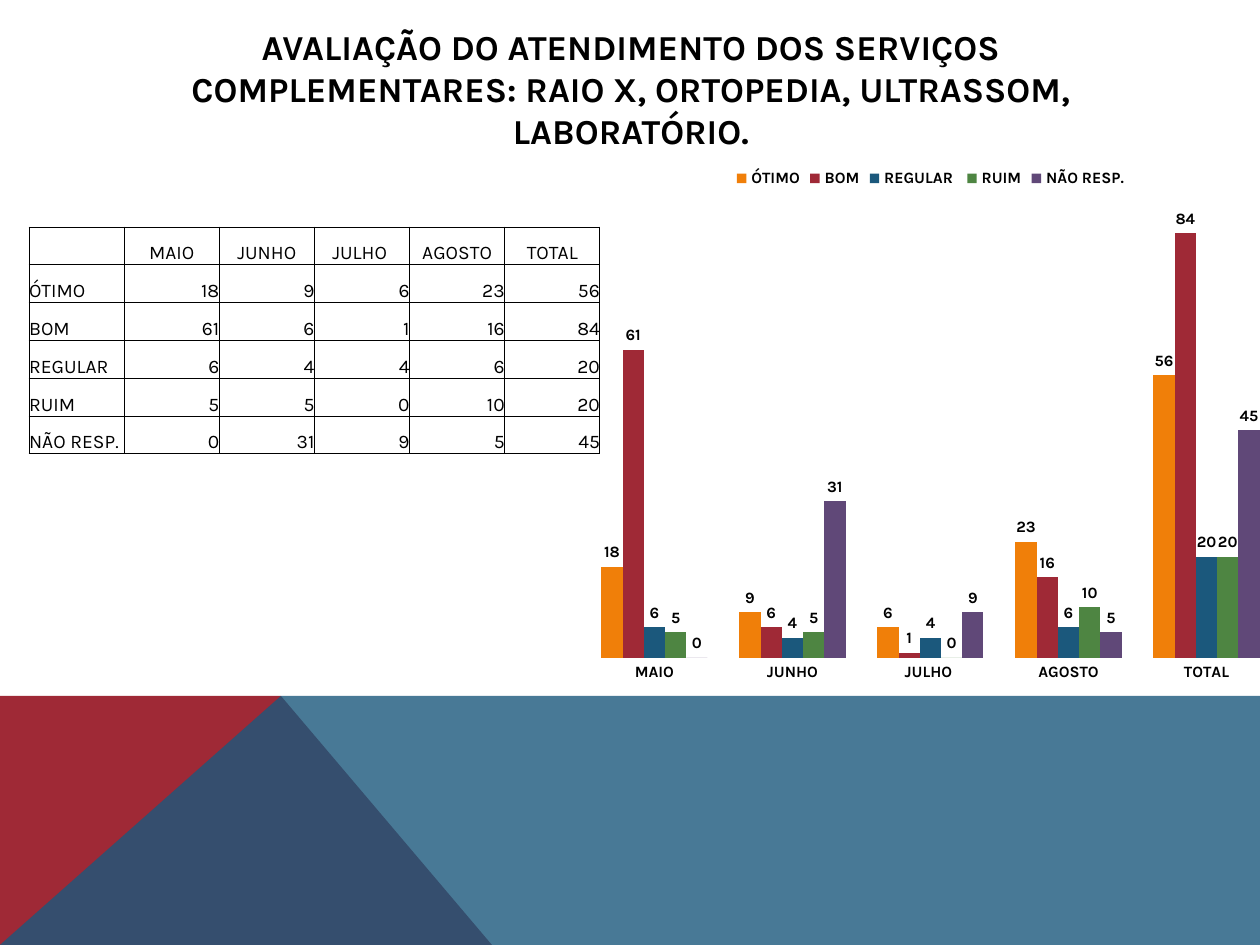
from lxml import etree
from pptx import Presentation
from pptx.chart.data import CategoryChartData
from pptx.dml.color import RGBColor
from pptx.enum.chart import XL_CHART_TYPE, XL_LABEL_POSITION, XL_LEGEND_POSITION, XL_TICK_MARK
from pptx.enum.text import MSO_ANCHOR, MSO_AUTO_SIZE, PP_ALIGN
from pptx.oxml import parse_xml
from pptx.oxml.ns import nsdecls, qn
from pptx.util import Pt

PX = 914400 / 126
BLACK = RGBColor(0x00, 0x00, 0x00)
ORANGE = RGBColor(0xF0, 0x7F, 0x09)
RED = RGBColor(0x9F, 0x29, 0x36)
BLUE = RGBColor(0x1B, 0x58, 0x7C)
GREEN = RGBColor(0x4E, 0x85, 0x42)
PURPLE = RGBColor(0x60, 0x48, 0x78)

MONTHS = ["MAIO", "JUNHO", "JULHO ", "AGOSTO", "TOTAL"]
RATINGS = [
    ("ÓTIMO", [18, 9, 6, 23, 56], ORANGE),
    ("BOM", [61, 6, 1, 16, 84], RED),
    ("REGULAR ", [6, 4, 4, 6, 20], BLUE),
    ("RUIM", [5, 5, 0, 10, 20], GREEN),
    ("NÃO RESP.", [0, 31, 9, 5, 45], PURPLE),
]


def emu(*lengths):
    return [round(length * PX) for length in lengths]


def style_font(font, size, bold):
    for name, value in {"name": "Karla", "size": Pt(size), "bold": bold}.items():
        setattr(font, name, value)
    font.color.rgb = BLACK


prs = Presentation()
prs.slide_width, prs.slide_height = emu(1260, 945)
slide = prs.slides.add_slide(prs.slide_layouts[5])
shapes = slide.shapes

# Bottom band: red wedge under a translucent blue one
wedges = [
    (RED, [(0, 945), (0, 696), (281, 696), (492, 945)]),
    (BLUE, [(0, 945), (281, 696), (1260, 696), (1260, 945)]),
]
for color, points in wedges:
    builder = shapes.build_freeform(*points[0], scale=PX)
    builder.add_line_segments(points[1:], close=True)
    wedge = builder.convert_to_shape()
    wedge.shadow.inherit = False
    wedge.fill.solid()
    wedge.fill.fore_color.rgb = color
    wedge.line.fill.background()
blue_fill = wedge.fill._xPr.find(".//" + qn("a:srgbClr"))
etree.SubElement(blue_fill, qn("a:alpha"), val="80000")

# Title, in front of the band
title = shapes.title
title.left, title.top, title.width, title.height = emu(113, 51, 1036, 76)
heading = title.text_frame
heading.text = ("AVALIAÇÃO DO ATENDIMENTO DOS SERVIÇOS COMPLEMENTARES: "
                "RAIO X, ORTOPEDIA, ULTRASSOM, LABORATÓRIO.")
for name, value in {"word_wrap": True, "auto_size": MSO_AUTO_SIZE.NONE,
                    "vertical_anchor": MSO_ANCHOR.MIDDLE}.items():
    setattr(heading, name, value)
heading.paragraphs[0].alignment = PP_ALIGN.CENTER
style_font(heading.paragraphs[0].runs[0].font, 20, True)
shapes._spTree.append(title._element)

# Table of answers
rows = [["", *MONTHS]] + [[name.strip(), *values] for name, values, _ in RATINGS]
table = shapes.add_table(6, 6, *emu(29, 227, 571, 227)).table
table.first_row = table.horz_banding = False
cell_format = {"margin_left": 0, "margin_right": 0, "margin_top": 0,
               "margin_bottom": 0, "vertical_anchor": MSO_ANCHOR.BOTTOM}
for r, row in enumerate(rows):
    for c, value in enumerate(row):
        cell = table.cell(r, c)
        for name, setting in cell_format.items():
            setattr(cell, name, setting)
        cell.fill.background()
        paragraph = cell.text_frame.paragraphs[0]
        if r == 0:
            paragraph.alignment = PP_ALIGN.CENTER
        else:
            paragraph.alignment = PP_ALIGN.RIGHT if c else PP_ALIGN.LEFT
        run = paragraph.add_run()
        run.text = str(value)
        style_font(run.font, 11, False)
        for position, side in enumerate(("lnL", "lnR", "lnT", "lnB")):
            cell._tc.tcPr.insert(position, parse_xml(
                f'<a:{side} {nsdecls("a")} w="6350"><a:solidFill>'
                f'<a:srgbClr val="{BLACK}"/></a:solidFill></a:{side}>'))

# Chart of answers
data = CategoryChartData()
data.categories = MONTHS
for name, values, _ in RATINGS:
    data.add_series(name, values)
chart = shapes.add_chart(XL_CHART_TYPE.COLUMN_CLUSTERED, *emu(571, 155, 719, 535), data).chart
style_font(chart.font, 10, False)
chart.has_title = False
chart.has_legend = True
chart.legend.position = XL_LEGEND_POSITION.TOP
chart.legend.include_in_layout = False
style_font(chart.legend.font, 9, True)

months_axis = chart.category_axis
months_axis.major_tick_mark = XL_TICK_MARK.NONE
months_axis.format.line.fill.background()
style_font(months_axis.tick_labels.font, 9, True)
count_axis = chart.value_axis
for name, value in {"visible": False, "has_major_gridlines": False,
                    "minimum_scale": 0, "maximum_scale": 90}.items():
    setattr(count_axis, name, value)

plot = chart.plots[0]
plot.gap_width = 150
plot.overlap = 0
plot.vary_by_categories = False
for series, (_, _, color) in zip(plot.series, RATINGS):
    series.format.fill.solid()
    series.format.fill.fore_color.rgb = color
    labels = series.data_labels
    labels.show_value = True
    labels.position = XL_LABEL_POSITION.OUTSIDE_END
    style_font(labels.font, 9, True)

# Plot area, as fractions of the chart
plot_area = chart._chartSpace.chart.plotArea
for layout in plot_area.findall(qn("c:layout")):
    plot_area.remove(layout)
plot_area.insert(0, parse_xml(
    f'<c:layout {nsdecls("c")}><c:manualLayout><c:layoutTarget val="inner"/>'
    '<c:xMode val="edge"/><c:yMode val="edge"/><c:x val="0.02"/><c:y val="0.09"/>'
    '<c:w val="0.96"/><c:h val="0.85"/></c:manualLayout></c:layout>'))

prs.save("out.pptx")
